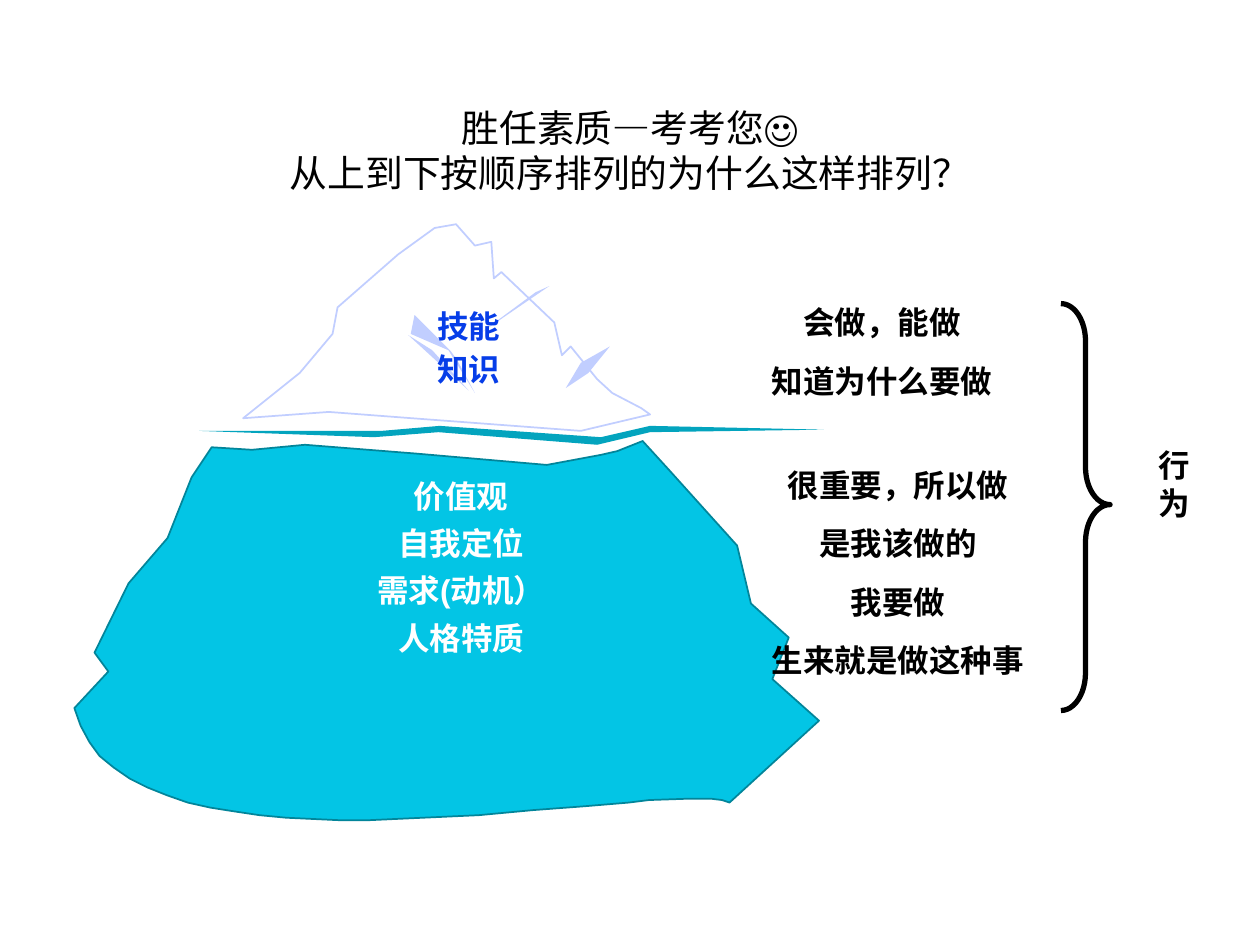
"""Build the iceberg slide on competence, from visible skills to hidden traits."""
from dataclasses import dataclass

from pptx import Presentation
from pptx.dml.color import RGBColor
from pptx.enum.shapes import MSO_SHAPE
from pptx.enum.text import MSO_ANCHOR, MSO_AUTO_SIZE, PP_ALIGN
from pptx.util import Inches, Pt

BRACE = MSO_SHAPE.RIGHT_BRACE
TOP, MIDDLE = MSO_ANCHOR.TOP, MSO_ANCHOR.MIDDLE
GROW, FIXED = MSO_AUTO_SIZE.SHAPE_TO_FIT_TEXT, MSO_AUTO_SIZE.NONE
LEFT, CENTER = PP_ALIGN.LEFT, PP_ALIGN.CENTER

COLUMNS, ROWS = 1000, 750
CELL = Inches(10) // COLUMNS


@dataclass(frozen=True)
class Theme:
    """Colours, fonts and type sizes of the slide."""
    ink: str = "000000"
    white: str = "FFFFFF"
    ice_edge: str = "C1CEFF"
    sea: str = "03C5E5"
    sea_edge: str = "02859A"
    waterline: str = "03A4BE"
    skill: str = "063DE8"
    title_font: str = "Calibri"
    body_font: str = "Arial"
    title_size: float = 21.6
    body_size: float = 18


THEME = Theme()

TIP = [
    (461, 342), (327, 332), (261, 327), (193, 332), (238, 296), (264, 265),
    (268, 244), (316, 202), (345, 181), (362, 178), (377, 195), (390, 192),
    (392, 221), (398, 216), (440, 256), (446, 282), (453, 275), (474, 301),
    (486, 312), (509, 324), (516, 329),
]
SUBMERGED = [
    (152, 379), (168, 355), (200, 357), (242, 353), (330, 360), (434, 369),
    (477, 361), (490, 358), (510, 350), (531, 373), (585, 433), (596, 479),
    (626, 506), (613, 539), (650, 572), (579, 637), (573, 635), (565, 634),
    (544, 634), (515, 635), (499, 637), (463, 640), (423, 643), (380, 647),
    (336, 649), (292, 651), (270, 651), (248, 650), (227, 649), (206, 647),
    (186, 644), (167, 641), (149, 637), (132, 631), (117, 625), (103, 618),
    (90, 609), (79, 600), (71, 589), (64, 576), (59, 562), (86, 533),
    (75, 518), (102, 463), (133, 427),
]
CREVICES = [
    [(484, 275), (467, 296), (449, 308), (461, 288)],
    [(436, 227), (379, 266), (425, 232)],
    [(324, 266), (372, 310), (343, 278)],
    [(326, 265), (329, 250), (358, 279), (363, 286), (377, 312), (356, 278)],
]
WATERLINE = [
    (158, 342), (303, 342), (349, 338), (477, 347), (516, 338), (654, 341),
    (516, 343), (474, 353), (348, 343), (297, 347),
]


def rgb(code):
    """Return the colour for a hex code."""
    return RGBColor.from_string(code)


def on_grid(box):
    """Turn left, top, width and height in grid cells into lengths."""
    return [cells * CELL for cells in box]


def add_outline(slide, points, fill, edge=None):
    """Draw a closed polygon through grid points."""
    builder = slide.shapes.build_freeform(*points[0], scale=CELL)
    builder.add_line_segments(points[1:], close=True)
    polygon = builder.convert_to_shape()
    polygon.shadow.inherit = False
    polygon.fill.solid()
    polygon.fill.fore_color.rgb = rgb(fill)
    if edge:
        polygon.line.color.rgb = rgb(edge)
        polygon.line.width = Pt(1)
    else:
        polygon.line.fill.background()


def add_brace(slide, box):
    """Draw the brace that gathers the statements into behaviour."""
    brace = slide.shapes.add_shape(BRACE, *on_grid(box))
    brace.shadow.inherit = False
    brace.adjustments[0], brace.adjustments[1] = 0.765, 0.494
    brace.fill.background()
    brace.line.color.rgb = rgb(THEME.ink)
    brace.line.width = Pt(3)


def add_text(slide, box, lines, *, color=THEME.ink, font=THEME.body_font,
             size=THEME.body_size, bold=True, align=CENTER, spacing=None,
             anchor=TOP, fit=GROW, wrap=False, insets=(0.12, 0.06)):
    """Write one paragraph per line with a shared format."""
    frame = slide.shapes.add_textbox(*on_grid(box)).text_frame
    frame.word_wrap = wrap
    frame.auto_size = fit
    frame.vertical_anchor = anchor
    frame.margin_left = frame.margin_right = Inches(insets[0])
    frame.margin_top = frame.margin_bottom = Inches(insets[1])
    frame.text = "\n".join(lines)
    for paragraph in frame.paragraphs:
        paragraph.alignment = align
        paragraph.line_spacing = spacing
        for run in paragraph.runs:
            run.font.name = font
            run.font.size = Pt(size)
            run.font.bold = bold
            run.font.color.rgb = rgb(color)


def add_iceberg(slide):
    """Draw the iceberg with its layers of competence."""
    add_outline(slide, TIP, THEME.white, THEME.ice_edge)
    add_outline(slide, SUBMERGED, THEME.sea, THEME.sea_edge)
    for crevice in CREVICES:
        add_outline(slide, crevice, THEME.ice_edge)
    add_text(slide, (327, 233, 90, 103), ["技能", "知识"],
             color=THEME.skill, spacing=1.15)
    add_outline(slide, WATERLINE, THEME.waterline)
    add_text(slide, (265, 365, 202, 211),
             ["价值观", "自我定位", "需求(动机）", "人格特质"],
             color=THEME.white, spacing=1.25)


def add_behaviour(slide):
    """Write what each layer means and gather it under behaviour."""
    add_text(slide, (571, 218, 258, 135), ["会做，能做", "知道为什么要做"],
             spacing=1.55)
    add_text(slide, (567, 347, 291, 259),
             ["很重要，所以做", "是我该做的", "我要做", "生来就是做这种事"],
             spacing=1.55, wrap=True)
    add_brace(slide, (842, 241, 39, 323))
    add_text(slide, (910, 349, 54, 90), ["行", "为"], align=LEFT,
             insets=(0.1, 0.05))


def main():
    """Build and save the slide."""
    deck = Presentation()
    deck.slide_width, deck.slide_height = COLUMNS * CELL, ROWS * CELL
    slide = deck.slides.add_slide(deck.slide_layouts[6])
    add_iceberg(slide)
    add_text(slide, (0, 74, COLUMNS, 90),
             ["胜任素质—考考您☺\v从上到下按顺序排列的为什么这样排列？"],
             font=THEME.title_font, size=THEME.title_size, bold=False,
             anchor=MIDDLE, fit=FIXED, wrap=True, insets=(0.1, 0.05))
    add_behaviour(slide)
    deck.save("out.pptx")


if __name__ == "__main__":
    main()
